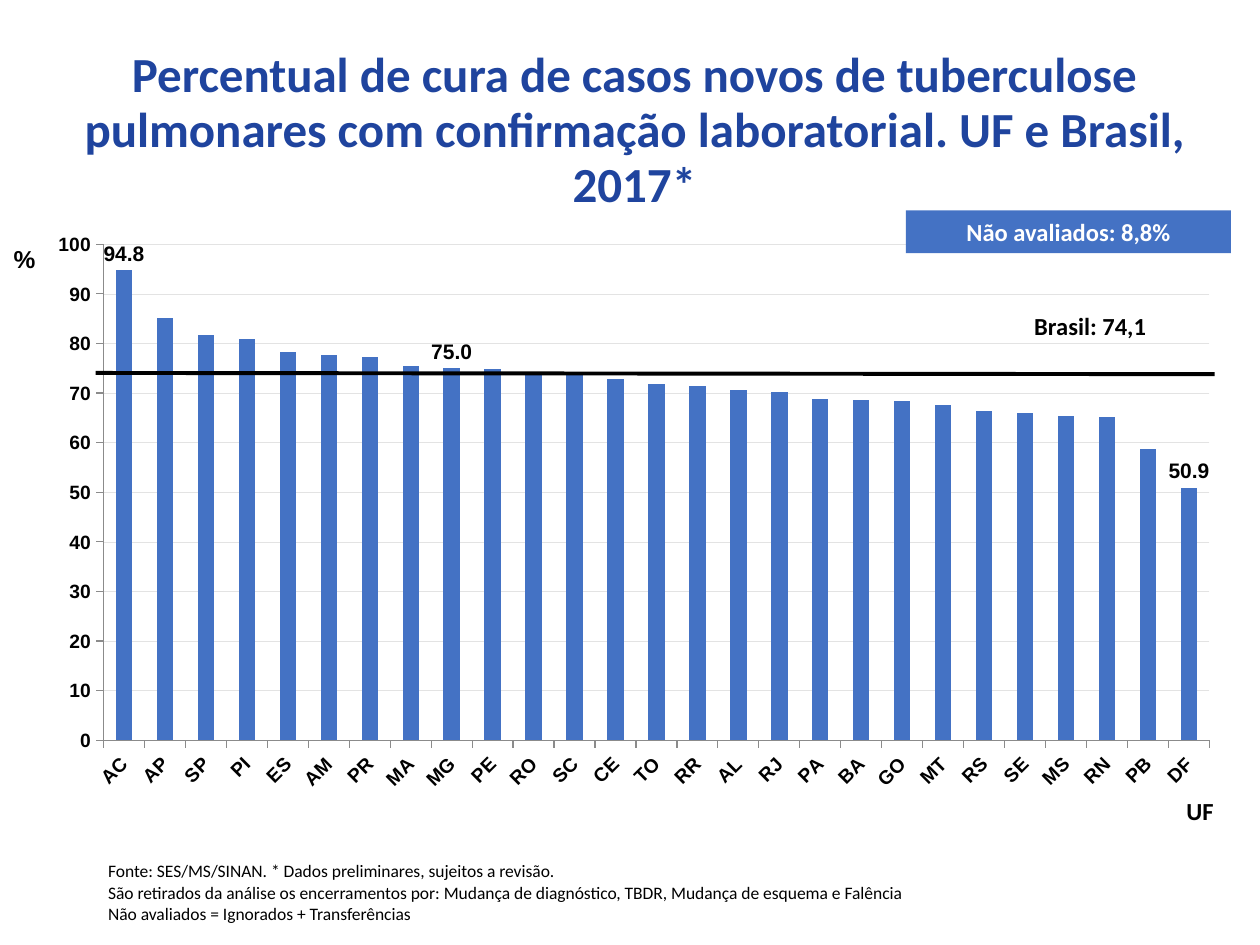
from lxml.etree import SubElement
from pptx import Presentation
from pptx.chart.data import CategoryChartData
from pptx.dml.color import RGBColor
from pptx.enum.chart import XL_CHART_TYPE, XL_LABEL_POSITION, XL_TICK_MARK
from pptx.enum.shapes import MSO_CONNECTOR, MSO_SHAPE
from pptx.enum.text import MSO_ANCHOR, PP_ALIGN
from pptx.oxml.ns import qn
from pptx.util import Inches, Pt

# Content
TITLE = ("Percentual de cura de casos novos de tuberculose pulmonares "
         "com confirmação laboratorial. UF e Brasil, 2017*")
CURE_RATES = {
    "AC": 94.8, "AP": 85.1, "SP": 81.7, "PI": 80.9, "ES": 78.2, "AM": 77.7,
    "PR": 77.3, "MA": 75.4, "MG": 75, "PE": 74.8, "RO": 73.8, "SC": 73.7,
    "CE": 72.9, "TO": 71.9, "RR": 71.4, "AL": 70.6, "RJ": 70.2, "PA": 68.7,
    "BA": 68.6, "GO": 68.4, "MT": 67.6, "RS": 66.3, "SE": 66, "MS": 65.4,
    "RN": 65.2, "PB": 58.8, "DF": 50.9,
}
LABELLED_STATES = ("AC", "MG", "DF")
FOOTNOTES = [
    "Fonte: SES/MS/SINAN. * Dados preliminares, sujeitos a revisão.",
    "São retirados da análise os encerramentos por: Mudança de diagnóstico, "
    "TBDR, Mudança de esquema e Falência",
    "Não avaliados = Ignorados + Transferências",
]
BLUE, NAVY, BLACK, WHITE, GRID, AXIS = (
    "4472C4", "1F449E", "000000", "FFFFFF", "E3E3E3", "8B8B8B")
PLOT_SHARES = {"x": 0.058, "y": 0.041, "w": 0.923, "h": 0.854}

# Text boxes: text, (left, top, width, height), font, alignment
ANNOTATIONS = [
    ("%", (0.01, 1.89, 0.47, 0.33), "Arial", PP_ALIGN.LEFT),
    ("UF", (9.21, 6.27, 0.63, 0.37), "Calibri", PP_ALIGN.CENTER),
    ("Brasil: 74,1", (8.11, 2.42, 1.42, 0.34), "Calibri", PP_ALIGN.LEFT),
]


def color(hex_code):
    return RGBColor.from_string(hex_code)


def style(font, size, hex_code=BLACK, name="Calibri", bold=True):
    font.size, font.name, font.bold = Pt(size), name, bold
    font.color.rgb = color(hex_code)


def write(shape, lines, size, hex_code=BLACK, name="Calibri", bold=True,
          align=PP_ALIGN.LEFT, anchor=MSO_ANCHOR.TOP):
    frame = shape.text_frame
    frame.word_wrap = True
    frame.vertical_anchor = anchor
    frame.text = "\n".join(lines)
    for paragraph in frame.paragraphs:
        paragraph.alignment = align
        for run in paragraph.runs:
            style(run.font, size, hex_code, name, bold)


def add_box(slide, preset, box, fill=None):
    shape = slide.shapes.add_shape(preset, *map(Inches, box))
    shape.shadow.inherit = False
    shape.line.fill.background()
    if fill:
        shape.fill.solid()
        shape.fill.fore_color.rgb = color(fill)
    else:
        shape.fill.background()
    return shape


def add_cure_chart(slide):
    data = CategoryChartData(number_format="0.0")
    data.categories = list(CURE_RATES)
    data.add_series("Series 1", list(CURE_RATES.values()))
    chart = slide.shapes.add_chart(
        XL_CHART_TYPE.COLUMN_CLUSTERED,
        *map(Inches, (0.27, 1.75, 9.51, 4.61)), data).chart
    chart.has_legend = chart.has_title = False
    style(chart.font, 10, bold=False)

    # Axes
    states, percent = chart.category_axis, chart.value_axis
    for axis in (states, percent):
        axis.major_tick_mark = XL_TICK_MARK.OUTSIDE
        axis.minor_tick_mark = XL_TICK_MARK.NONE
        axis.format.line.color.rgb = color(AXIS)
        axis.format.line.width = Pt(0.75)
        style(axis.tick_labels.font, 11, name="Arial")
    states.has_major_gridlines = False
    states._element.find(f"{qn('c:txPr')}/{qn('a:bodyPr')}").set("rot", "-2700000")
    percent.minimum_scale, percent.maximum_scale, percent.major_unit = 0, 100, 10
    percent.tick_labels.number_format = "0"
    percent.tick_labels.number_format_is_linked = False
    percent.major_gridlines.format.line.color.rgb = color(GRID)
    percent.major_gridlines.format.line.width = Pt(0.25)

    # Columns, with values on the highlighted states only
    plot = chart.plots[0]
    plot.gap_width = 150
    plot.vary_by_categories = False
    rates = plot.series[0]
    rates.format.fill.solid()
    rates.format.fill.fore_color.rgb = color(BLUE)
    rates.data_labels.show_value = False
    for state in LABELLED_STATES:
        label = rates.points[list(CURE_RATES).index(state)].data_label
        style(label.font, 12, name="Arial")
        label.position = XL_LABEL_POSITION.OUTSIDE_END

    # Fixed plot area
    plot_area = chart._chartSpace.chart.plotArea
    layout = plot_area.find(qn("c:layout"))
    if layout is None:
        layout = SubElement(plot_area, qn("c:layout"))
        plot_area.insert(0, layout)
    manual = SubElement(layout, qn("c:manualLayout"))
    settings = {"layoutTarget": "inner", "xMode": "edge", "yMode": "edge"}
    for tag, value in (settings | PLOT_SHARES).items():
        SubElement(manual, qn(f"c:{tag}")).set("val", str(value))


def main():
    deck = Presentation()
    deck.slide_width, deck.slide_height = Inches(10), Inches(7.5)
    slide = deck.slides.add_slide(deck.slide_layouts[6])

    add_cure_chart(slide)

    # Title
    title = add_box(slide, MSO_SHAPE.ROUNDED_RECTANGLE, (0.42, 0.33, 9.23, 1.42))
    title.adjustments[0] = 0
    write(title, [TITLE], 28, NAVY, align=PP_ALIGN.CENTER, anchor=MSO_ANCHOR.MIDDLE)
    title.text_frame.paragraphs[0].line_spacing = 0.93

    # Annotations around the chart
    for text, box, font, align in ANNOTATIONS:
        note = slide.shapes.add_textbox(*map(Inches, box))
        write(note, [text], 14, name=font, align=align)
    not_assessed = add_box(slide, MSO_SHAPE.RECTANGLE, (7.19, 1.67, 2.58, 0.34), BLUE)
    write(not_assessed, ["Não avaliados: 8,8%"], 14, WHITE, align=PP_ALIGN.CENTER)

    # National average line
    average = slide.shapes.add_connector(
        MSO_CONNECTOR.STRAIGHT, *map(Inches, (0.76, 2.96, 9.64, 2.97)))
    average.line.color.rgb = color(BLACK)
    average.line.width = Pt(2.25)
    SubElement(average._element.spPr, qn("a:effectLst"))

    # Footnotes
    footer = slide.shapes.add_textbox(*map(Inches, (0.76, 6.78, 9.53, 0.61)))
    write(footer, FOOTNOTES, 10, bold=False)

    deck.save("out.pptx")


if __name__ == "__main__":
    main()
